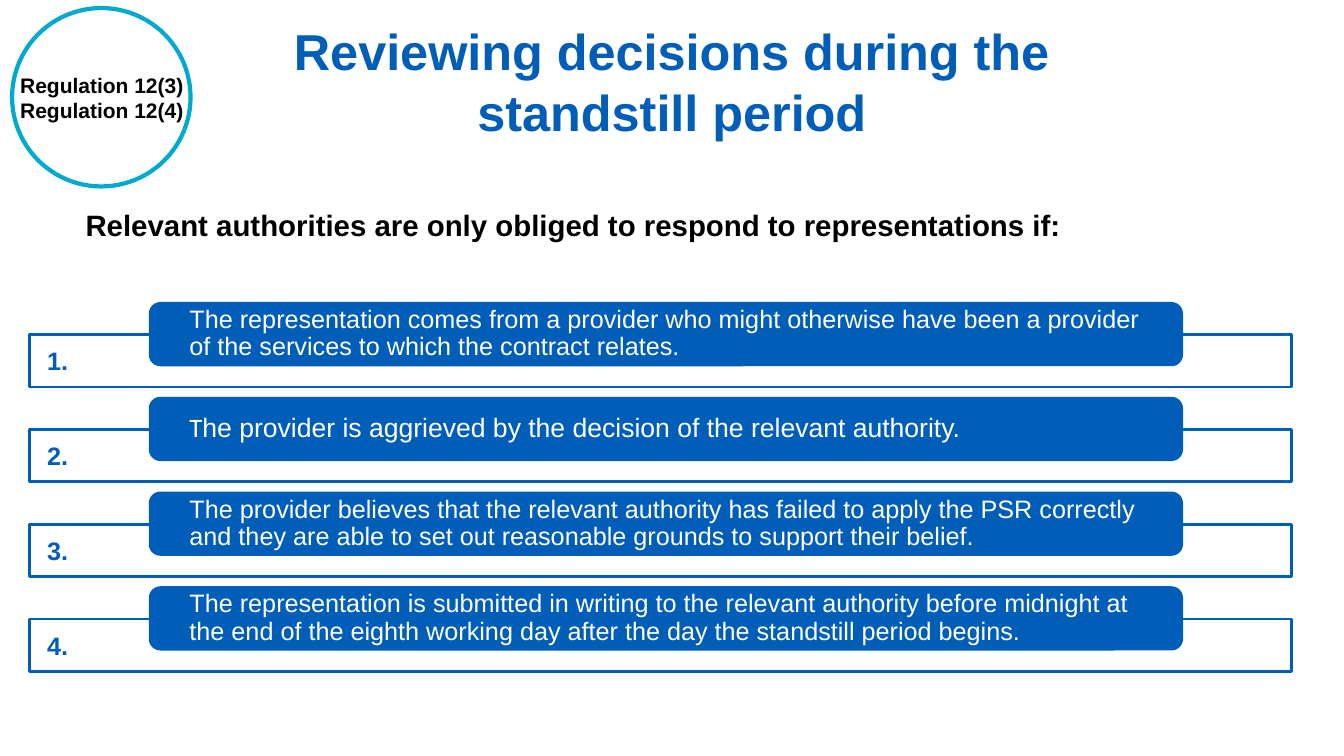
from pptx import Presentation
from pptx import util as u
from pptx.dml import color
from pptx.enum import shapes, text

BLUE, CYAN, WHITE, BLACK = "005EB8", "00A9CE", "FFFFFF", "000000"
CONDITIONS = [
    "The representation comes from a provider who might otherwise have been a provider "
    "of the services to which the contract relates.",
    "The provider is aggrieved by the decision of the relevant authority.",
    "The provider believes that the relevant authority has failed to apply the PSR correctly "
    "and they are able to set out reasonable grounds to support their belief.",
    "The representation is submitted in writing to the relevant authority before midnight at "
    "the end of the eighth working day after the day the standstill period begins.",
]


def rgb(value):
    return color.RGBColor.from_string(value)


def write(shape, lines, size, ink=BLACK, bold=False, align=text.PP_ALIGN.LEFT,
          anchor=text.MSO_ANCHOR.TOP, spacing=None, insets=(0.1, 0.05)):
    """Fill a shape with one paragraph per line and format them alike."""
    frame = shape.text_frame
    frame.word_wrap = True
    frame.auto_size = text.MSO_AUTO_SIZE.NONE
    frame.vertical_anchor = anchor
    frame.margin_left = frame.margin_right = u.Inches(insets[0])
    frame.margin_top = frame.margin_bottom = u.Inches(insets[1])
    frame.text = "\n".join(lines)
    for paragraph in frame.paragraphs:
        paragraph.alignment = align
        paragraph.line_spacing = spacing
        for run in paragraph.runs:
            run.font.name = "Arial"
            run.font.size = u.Pt(size)
            run.font.bold = bold
            run.font.color.rgb = rgb(ink)


def add_box(slide, kind, box, fill, line, width):
    shape = slide.shapes.add_shape(kind, *map(u.Inches, box))
    shape.shadow.inherit = False
    shape.fill.solid()
    shape.fill.fore_color.rgb = rgb(fill)
    shape.line.color.rgb = rgb(line)
    shape.line.width = u.Pt(width)
    return shape


def add_label(slide, box, lines, size, **style):
    write(slide.shapes.add_textbox(*map(u.Inches, box)), lines, size, **style)


def add_title(slide, box, title):
    shape = slide.shapes.title
    shape.left, shape.top, shape.width, shape.height = map(u.Inches, box)
    write(shape, [title], 36, ink=BLUE, bold=True,
          align=text.PP_ALIGN.CENTER, anchor=text.MSO_ANCHOR.MIDDLE)


def add_regulation_badge(slide, left, top, diameter):
    add_box(slide, shapes.MSO_SHAPE.OVAL, (left, top, diameter, diameter), WHITE, CYAN, 3)
    add_label(slide, (left - 0.03, top + 0.59, diameter + 0.07, 0.61),
              ["Regulation 12(3)", "Regulation 12(4)"], 15,
              bold=True, align=text.PP_ALIGN.CENTER)


def add_condition(slide, left, top, width, number, condition):
    """Draw a numbered outline bar with a filled panel overlapping its top edge."""
    add_box(slide, shapes.MSO_SHAPE.RECTANGLE, (left, top + 0.31, width, 0.52), WHITE, BLUE, 2)
    panel = add_box(slide, shapes.MSO_SHAPE.ROUNDED_RECTANGLE,
                    (left + 1.2, top, width - 2.29, 0.61), BLUE, BLUE, 2)
    size = 19 if number == 2 else 18
    write(panel, [condition], size, ink=WHITE, anchor=text.MSO_ANCHOR.MIDDLE,
          spacing=0.9, insets=(0.36, 0.03))
    if number == 2:
        # The initial letter of this panel is set in Calibri.
        paragraph = panel.text_frame.paragraphs[0]
        initial = paragraph.runs[0]
        rest = paragraph.add_run()
        initial.text, rest.text = condition[0], condition[1:]
        initial.font.name, rest.font.name = "Calibri", "Arial"
        rest.font.size = u.Pt(size)
        rest.font.color.rgb = rgb(WHITE)
    add_label(slide, (left + 0.08, top + 0.37, 0.47, 0.4), [f"{number}."], 18,
              ink=BLUE, bold=True)


def add_conditions(slide, left, top, width, pitch):
    for index, condition in enumerate(CONDITIONS):
        add_condition(slide, left, top + index * pitch, width, index + 1, condition)


def main():
    presentation = Presentation()
    presentation.slide_width = u.Inches(13.33)
    presentation.slide_height = u.Inches(7.5)
    slide = presentation.slides.add_slide(presentation.slide_layouts[5])
    add_title(slide, (1.9, 0.05, 9.53, 1.5), "Reviewing decisions during the standstill period")
    add_regulation_badge(slide, 0.12, 0.08, 1.77)
    add_label(slide, (0.75, 2.01, 11.83, 0.45),
              ["Relevant authorities are only obliged to respond to representations if:"],
              21, bold=True)
    add_conditions(slide, 0.29, 3.01, 12.52, 0.94)
    presentation.save("out.pptx")


if __name__ == "__main__":
    main()
